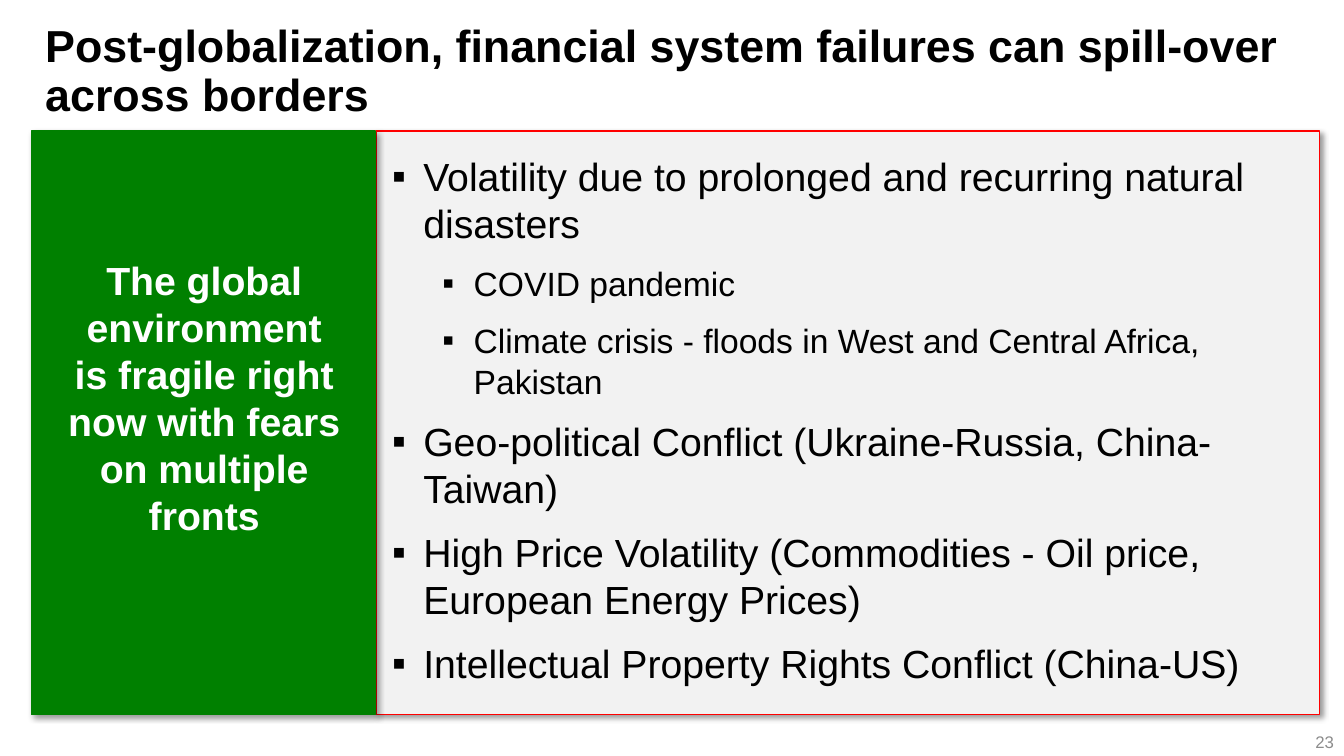
from lxml import etree
from pptx import Presentation
from pptx.dml.color import RGBColor
from pptx.enum.shapes import MSO_SHAPE as SHAPE
from pptx.enum.text import MSO_ANCHOR as ANCHOR, PP_ALIGN as ALIGN
from pptx.oxml import parse_xml
from pptx.oxml.ns import nsdecls, qn
from pptx.util import Emu, Pt

PX = 9144  # 100 px to the inch


def px(n):
    return Emu(n * PX)


def color(value):
    return RGBColor.from_string(value)


class SlideBuilder:
    font = "Arial"
    black, white, grey = "000000", "FFFFFF", "8C8C8C"
    green, red, pale = "008000", "FF0000", "F2F2F2"

    def __init__(self, prs):
        self.slide = prs.slides.add_slide(prs.slide_layouts[6])

    def panel(self, x, y, w, h, fill, line):
        sp = self.slide.shapes.add_shape(SHAPE.RECTANGLE, px(x), px(y), px(w), px(h))
        sp.fill.solid()
        sp.fill.fore_color.rgb = color(fill)
        sp.line.color.rgb = color(line)
        sp.line.width = Pt(1)
        self.shadow(sp)

    def shadow(self, sp):
        sp.shadow.inherit = False
        effects = sp._element.spPr.find(qn("a:effectLst"))
        effects.append(parse_xml(
            f'<a:outerShdw {nsdecls("a")} blurRad="{Pt(4)}" dist="{Pt(3)}" '
            'dir="2700000" algn="tl" rotWithShape="0"><a:srgbClr val="000000">'
            '<a:alpha val="40000"/></a:srgbClr></a:outerShdw>'))

    def box(self, x, y, w, h, anchor=ANCHOR.TOP):
        tf = self.slide.shapes.add_textbox(px(x), px(y), px(w), px(h)).text_frame
        tf.word_wrap = True
        tf.vertical_anchor = anchor
        return tf

    def style(self, p, size, hue, bold=False):
        for r in p.runs:
            r.font.name = self.font
            r.font.size = Pt(size)
            r.font.bold = bold
            r.font.color.rgb = color(hue)

    def text(self, x, y, w, h, text, size, hue, bold=False, align=ALIGN.LEFT,
             anchor=ANCHOR.TOP, spacing=None):
        p = self.box(x, y, w, h, anchor).paragraphs[0]
        p.text = text
        p.alignment = align
        p.line_spacing = spacing
        self.style(p, size, hue, bold)

    def bullets(self, x, y, w, h, items):
        tf = self.box(x, y, w, h)
        for i, (level, text) in enumerate(items):
            p = tf.add_paragraph() if i else tf.paragraphs[0]
            p.text = text
            p.level = level
            p.space_before = p.space_after = Pt(6)
            self.style(p, 28 - 4 * level, self.black)
            pPr = p._p.get_or_add_pPr()
            pPr.set("marL", str(px(31 + 50 * level)))
            pPr.set("indent", str(px(-31)))
            etree.SubElement(pPr, qn("a:buFont")).set("typeface", self.font)
            etree.SubElement(pPr, qn("a:buChar")).set("char", "▪")


def main():
    prs = Presentation()
    prs.slide_width, prs.slide_height = px(1333), px(750)
    s = SlideBuilder(prs)

    # Panels
    s.panel(373, 130, 936, 579, s.pale, s.red)
    s.panel(31, 130, 341, 579, s.green, s.green)

    # Title
    s.text(35, 19, 1254, 141,
           "Post-globalization, financial system failures can spill-over across borders",
           32, s.black, bold=True, spacing=0.9)

    # Key message
    s.text(57, 249, 291, 293,
           "The global environment is fragile right now with fears on multiple fronts",
           28, s.white, bold=True, align=ALIGN.CENTER)

    # Sources of fragility
    s.bullets(379, 146, 948, 545, [
        (0, "Volatility due to prolonged and recurring natural disasters"),
        (1, "COVID pandemic"),
        (1, "Climate crisis - floods in West and Central Africa, Pakistan"),
        (0, "Geo-political Conflict (Ukraine-Russia, China-Taiwan)"),
        (0, "High Price Volatility (Commodities - Oil price, European Energy Prices)"),
        (0, "Intellectual Property Rights Conflict (China-US)"),
    ])

    # Slide number
    s.text(1033, 716, 300, 40, "23", 12, s.grey, align=ALIGN.RIGHT,
           anchor=ANCHOR.MIDDLE)

    prs.save("out.pptx")


if __name__ == "__main__":
    main()
